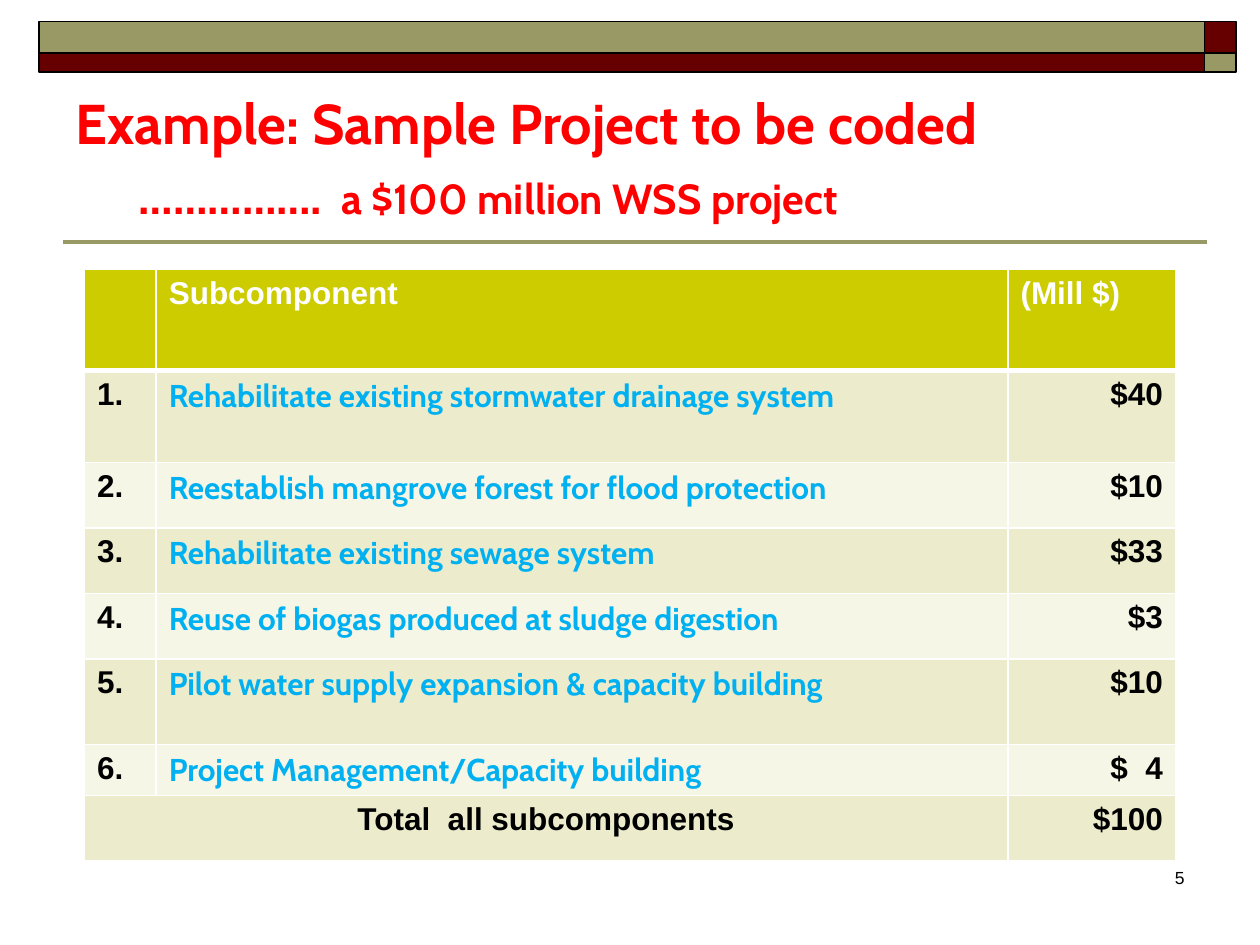
import pptx
import pptx.util
import pptx.dml.color
import pptx.enum.shapes
import pptx.enum.text
import pptx.oxml
import pptx.oxml.ns

Inches, Pt = pptx.util.Inches, pptx.util.Pt
ALIGN = pptx.enum.text.PP_ALIGN
OLIVE, MAROON, BLACK, WHITE = "999966", "660000", "000000", "FFFFFF"


def color(code):
    return pptx.dml.color.RGBColor.from_string(code)


def style(font, name, size, code, bold=True):
    font.name, font.size, font.bold = name, Pt(size), bold
    font.color.rgb = color(code)


deck = pptx.Presentation()
deck.slide_width, deck.slide_height = Inches(10), Inches(7.5)
slide = deck.slides.add_slide(deck.slide_layouts[5])
shapes = slide.shapes

# Rule under the title
rule = shapes.add_connector(
    pptx.enum.shapes.MSO_CONNECTOR.STRAIGHT,
    Inches(9.58), Inches(1.92), Inches(0.5), Inches(1.92))
rule.line.color.rgb = color(OLIVE)
rule.line.width = Pt(2)
rule._element.spPr.append(pptx.oxml.ns.qn and pptx.oxml.parse_xml(
    "<a:effectLst %s/>" % pptx.oxml.ns.nsdecls("a")))

# Checkered band along the top
for top, high, fills in ((0.17, 0.25, (OLIVE, MAROON)),
                         (0.42, 0.15, (MAROON, OLIVE))):
    for left, wide, fill in zip((0.31, 9.56), (9.25, 0.25), fills):
        bar = shapes.add_shape(
            pptx.enum.shapes.MSO_SHAPE.RECTANGLE,
            Inches(left), Inches(top), Inches(wide), Inches(high))
        bar.shadow.inherit = False
        bar.fill.solid()
        bar.fill.fore_color.rgb = color(fill)
        bar.line.color.rgb = color(BLACK)
        bar.line.width = Pt(1)

# Title
title = shapes.title
title.left, title.top = Inches(0.5), Inches(0.58)
title.width, title.height = Inches(9), Inches(1.25)
frame = title.text_frame
frame.auto_size = pptx.enum.text.MSO_AUTO_SIZE.NONE
frame.vertical_anchor = pptx.enum.text.MSO_ANCHOR.BOTTOM
head = frame.paragraphs[0]
head.text = "Example: Sample Project to be coded"
style(head.font, "Cabin", 32, "FF0000")
sub = frame.add_paragraph()
sub._p.get_or_add_pPr().set("marL", str(Inches(0.5)))
for text, size in (("…………….", 28), ("  a $100 million WSS project", 24)):
    run = sub.add_run()
    run.text = text
    style(run.font, "Cabin", size, "FF0000")
for para in frame.paragraphs:
    para.alignment = ALIGN.LEFT
    para.line_spacing = Pt(39)

# Table of subcomponents
rows = [
    ("", "Subcomponent", "(Mill $)"),
    ("1.", "Rehabilitate existing stormwater drainage system", "$40"),
    ("2.", "Reestablish mangrove forest for flood protection", "$10"),
    ("3.", "Rehabilitate existing sewage system", "$33"),
    ("4.", "Reuse of biogas produced at sludge digestion", "$3"),
    ("5.", "Pilot water supply expansion & capacity building", "$10"),
    ("6.", "Project Management/Capacity building", "$  4"),
    ("Total  all subcomponents", "", "$100"),
]
highs = (0.8, 0.73, 0.52, 0.52, 0.52, 0.68, 0.4, 0.52)
last = len(rows) - 1
table = shapes.add_table(len(rows), 3, Inches(0.67), Inches(2.14),
                         Inches(8.67), Inches(4.7)).table
for col, wide in zip(table.columns, (0.57, 6.76, 1.33)):
    col.width = Inches(wide)
for r, row in enumerate(rows):
    table.rows[r].height = Inches(highs[r])
    for c, text in enumerate(row):
        cell = table.cell(r, c)
        cell.text = text
        para = cell.text_frame.paragraphs[0]
        if r == 0:
            style(para.font, "Arial", 18, WHITE)
        elif c == 1:
            style(para.font, "Cabin", 18, "00B0F0")
        else:
            style(para.font, "Arial", 18, BLACK)
        if r and c == 2:
            para.alignment = ALIGN.RIGHT
        elif r == last:
            para.alignment = ALIGN.CENTER

        edges = cell._tc.get_or_add_tcPr()
        for side in "LRTB":
            thick = (r, side) in ((0, "B"), (1, "T"))
            edges.append(pptx.oxml.parse_xml(
                '<a:ln%s %s w="%d"><a:solidFill><a:srgbClr val="%s"/>'
                '</a:solidFill></a:ln%s>'
                % (side, pptx.oxml.ns.nsdecls("a"),
                   Pt(3 if thick else 1), WHITE, side)))
        cell.fill.solid()
        band = "ECECCC" if r % 2 else "F6F6E7"
        cell.fill.fore_color.rgb = color(band if r else "CCCC00")
table.cell(last, 0).merge(table.cell(last, 1))

# Page number
box = shapes.add_textbox(Inches(7.42), Inches(6.83), Inches(2.08), Inches(0.5))
box.text_frame.word_wrap = True
page = box.text_frame.paragraphs[0]
page.text = "5"
page.alignment = ALIGN.RIGHT
style(page.font, "Arial", 10, BLACK, False)

deck.save("out.pptx")
